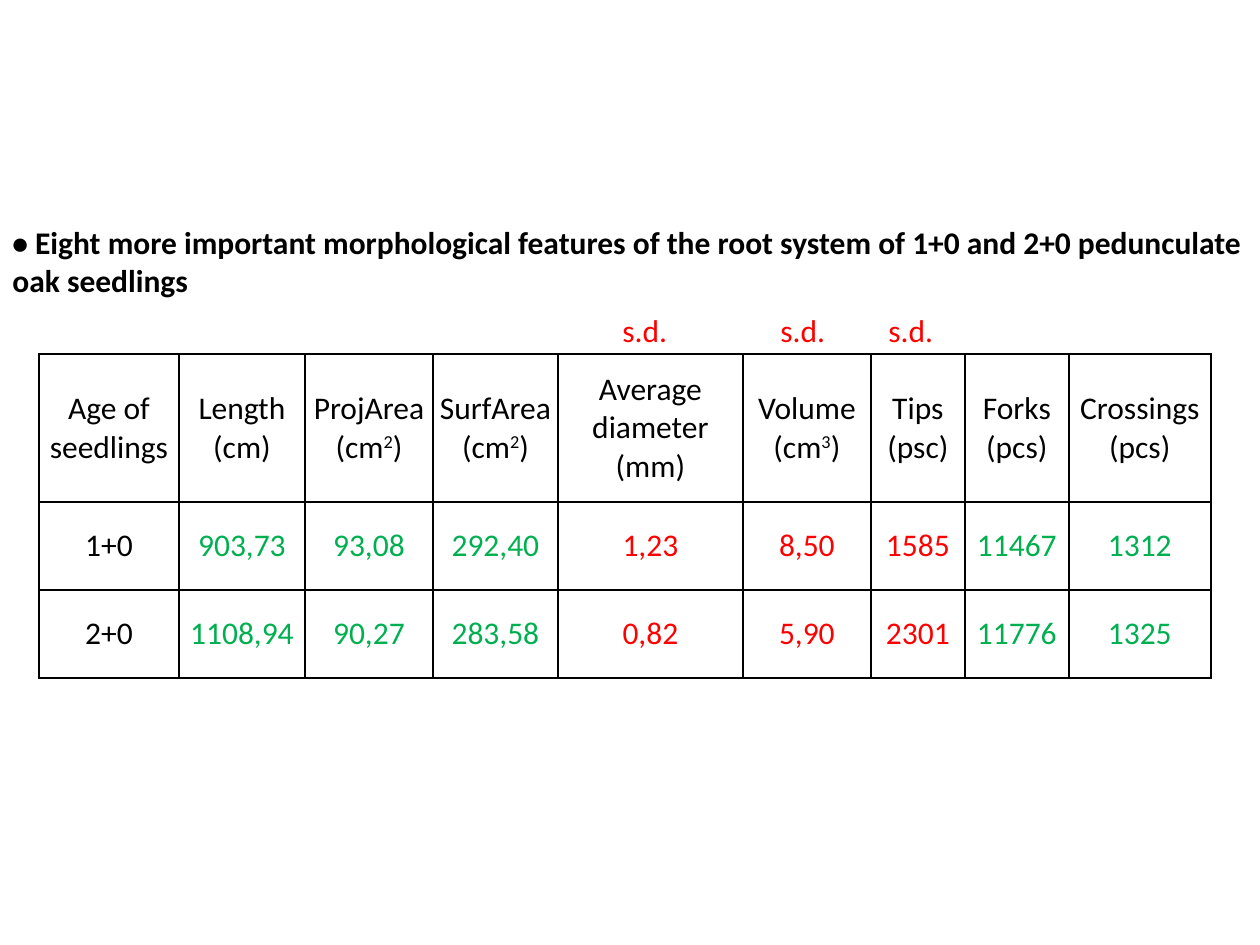
"""Build a slide with a table of root features of oak seedlings."""
import pptx
import pptx.dml.color
import pptx.enum.text
import pptx.oxml
import pptx.oxml.ns
import pptx.util

PX = 914400 / 126
BLACK, GREEN, RED = "000000", "00B050", "FF0000"
FONT = {"name": "Calibri", "size": pptx.util.Pt(18)}
CELL = {
    "margin_left": round(6 * PX), "margin_right": round(6 * PX),
    "margin_top": 0, "margin_bottom": 0,
    "vertical_anchor": pptx.enum.text.MSO_ANCHOR.MIDDLE,
}
HEADS = [
    "Age of seedlings", "Length (cm)", "ProjArea (cm|2|)", "SurfArea (cm|2|)",
    "Average diameter (mm)", "Volume (cm|3|)", "Tips (psc)", "Forks (pcs)",
    "Crossings (pcs)",
]
ROWS = [
    HEADS,
    ["1+0", "903,73", "93,08", "292,40", "1,23", "8,50", "1585", "11467", "1312"],
    ["2+0", "1108,94", "90,27", "283,58", "0,82", "5,90", "2301", "11776", "1325"],
]
HUES = [BLACK] + [GREEN] * 3 + [RED] * 3 + [GREEN] * 2
WIDTHS = [140, 126, 128, 125, 185, 128, 94, 104, 142]
HEIGHTS = [148, 88, 88]
LABELS = [
    (0, 217, 1260, 89, BLACK, True,
     "• Eight more important morphological features of the root system "
     "of 1+0 and 2+0 pedunculate oak seedlings"),
] + [(left, 305, 70, 50, RED, False, "s.d.") for left in (610, 768, 876)]


def scale(*sizes):
    return [round(size * PX) for size in sizes]


def write(para, text, hue, bold=False):
    for spot, part in enumerate(text.split("|")):
        run = para.add_run()
        run.text = part
        for key, value in {**FONT, "bold": bold}.items():
            setattr(run.font, key, value)
        run.font.color.rgb = pptx.dml.color.RGBColor.from_string(hue)
        if spot % 2:
            run._r.get_or_add_rPr().set("baseline", "30000")


deck = pptx.Presentation()
deck.slide_width, deck.slide_height = scale(1260, 945)
slide = deck.slides.add_slide(deck.slide_layouts[6])

box = scale(39, 354, sum(WIDTHS), sum(HEIGHTS))
table = slide.shapes.add_table(len(ROWS), len(HEADS), *box).table
table.first_row = table.horz_banding = False
for column, width in zip(table.columns, scale(*WIDTHS)):
    column.width = width
for row, height in zip(table.rows, scale(*HEIGHTS)):
    row.height = height

for r, texts in enumerate(ROWS):
    for c, text in enumerate(texts):
        cell = table.cell(r, c)
        for key, value in CELL.items():
            setattr(cell, key, value)
        para = cell.text_frame.paragraphs[0]
        para.alignment = pptx.enum.text.PP_ALIGN.CENTER
        write(para, text, HUES[c] if r else BLACK)
        props = cell._tc.get_or_add_tcPr()
        for side in "LRTB":
            props.append(pptx.oxml.parse_xml(
                f'<a:ln{side} {pptx.oxml.ns.nsdecls("a")} w="12700"><a:solidFill>'
                f'<a:srgbClr val="{BLACK}"/></a:solidFill></a:ln{side}>'))
        cell.fill.background()

for left, top, width, height, hue, bold, text in LABELS:
    frame = slide.shapes.add_textbox(*scale(left, top, width, height)).text_frame
    frame.word_wrap = bold
    frame.auto_size = pptx.enum.text.MSO_AUTO_SIZE.SHAPE_TO_FIT_TEXT
    write(frame.paragraphs[0], text, hue, bold)

deck.save("out.pptx")
